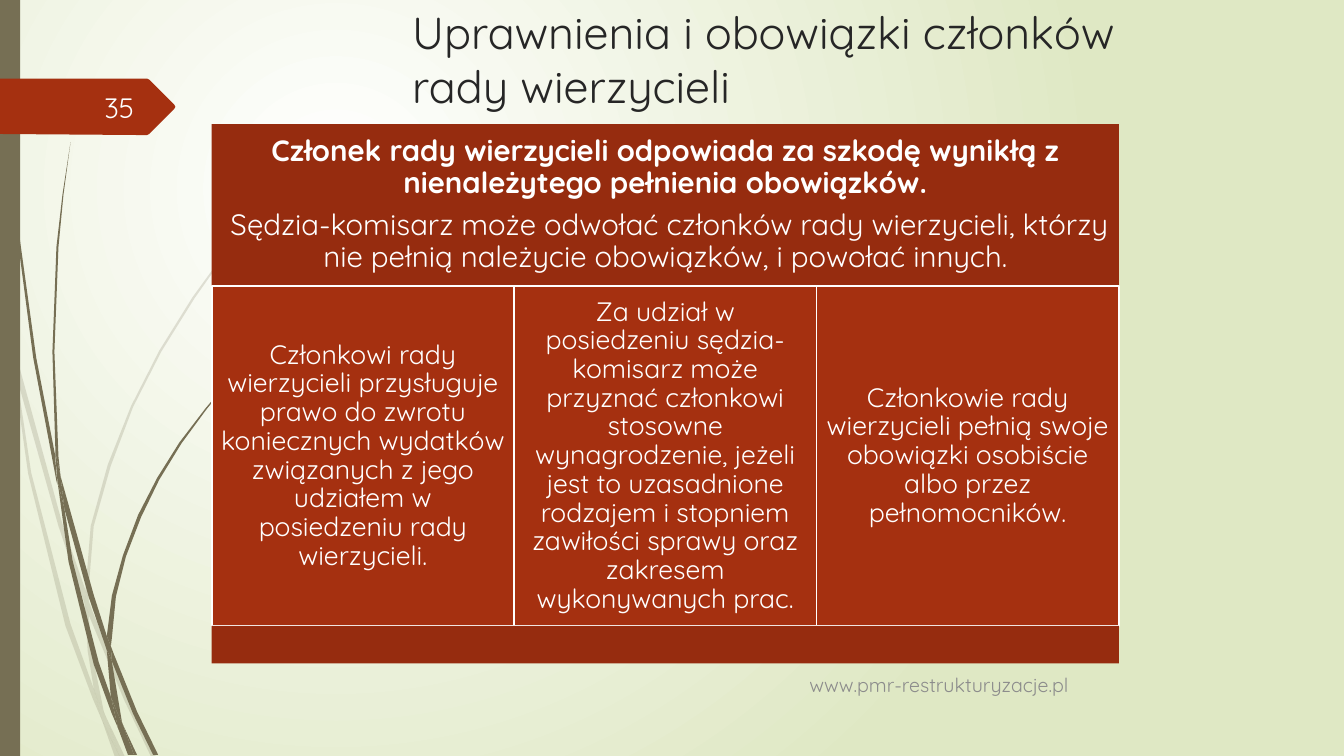
from lxml.etree import SubElement
from pptx import Presentation
from pptx.dml.color import RGBColor
from pptx.enum.shapes import MSO_SHAPE
from pptx.enum.text import MSO_ANCHOR, PP_ALIGN
from pptx.oxml.ns import qn
from pptx.util import Pt

COLORS = {
    "white": "FFFFFF", "pale green": "DFE8C4", "olive": "766F54",
    "red": "A53010", "dark red": "962C0F", "title": "262626",
    "footer": "8C8C8C", "number": "FEFFFF",
}


def add_filled(shape, fill, line=None, opacity=100):
    """Give a shape its fill, outline and opacity, without a shadow."""
    shape.shadow.inherit = False
    shape.fill.solid()
    shape.fill.fore_color.rgb = RGBColor.from_string(COLORS[fill])
    if opacity < 100:
        color = shape.fill._xPr.find(".//" + qn("a:srgbClr"))
        SubElement(color, qn("a:alpha"), val=str(opacity * 1000))
    if line:
        shape.line.color.rgb = RGBColor.from_string(COLORS[line])
        shape.line.width = Pt(1.25)
    else:
        shape.line.fill.background()


def write_text(shape, *texts, size, color, align=PP_ALIGN.LEFT, anchor=MSO_ANCHOR.MIDDLE,
               margin=None, spacing=None, after=0, bold_first=False):
    """Write one paragraph per text."""
    frame = shape.text_frame
    frame.word_wrap = True
    frame.vertical_anchor = anchor
    if margin is not None:
        frame.margin_left = frame.margin_right = Pt(margin)
        frame.margin_top = frame.margin_bottom = Pt(margin)
    for index, text in enumerate(texts):
        paragraph = frame.add_paragraph() if index else frame.paragraphs[0]
        paragraph.alignment = align
        paragraph.line_spacing = spacing
        paragraph.space_after = Pt(after)
        run = paragraph.add_run()
        run.text = text
        run.font.name = "Quicksand"
        run.font.size = Pt(size)
        run.font.bold = bold_first and index == 0
        run.font.color.rgb = RGBColor.from_string(COLORS[color])


presentation = Presentation()
presentation.slide_width = Pt(960)
presentation.slide_height = Pt(540)
slide = presentation.slides.add_slide(presentation.slide_layouts[6])
shapes = slide.shapes

# Background: round gradient with its centre at the upper left
background = slide.background.fill
background.gradient()
for stop, position, name in zip(background.gradient_stops, (0, 1), ("white", "pale green")):
    stop.position = position
    stop.color.rgb = RGBColor.from_string(COLORS[name])
gradient = slide._element.find(".//" + qn("a:gradFill"))
gradient.remove(gradient.find(qn("a:lin")))
circle = SubElement(gradient, qn("a:path"), path="circle")
SubElement(circle, qn("a:fillToRect"), l="50000", t="50000", r="100000", b="100000")

# Outlines, in units of 0.72 pt
pale_grass = [
    [(11, 350), (9, 322), (0, 282), (0, 299), (10, 344)],
    [(58, 522), (84, 599), (85, 586), (62, 520), (14, 345), (17, 376)],
    [(92, 607), (88, 596), (88, 610), (123, 694), (150, 751), (155, 751), (127, 692)],
    [(119, 751), (124, 751), (105, 711)],
    [(93, 683), (70, 619), (31, 469), (17, 376), (11, 350), (28, 470), (65, 621), (92, 693),
     (101, 714), (99, 707)],
    [(84, 599), (87, 646), (93, 683), (96, 692), (105, 711), (103, 706), (91, 646), (88, 610),
     (88, 608)],
    [(88, 584), (93, 522), (110, 462), (132, 404), (160, 349), (193, 296), (229, 245),
     (268, 198), (290, 175), (312, 154), (312, 153), (289, 175), (268, 197), (228, 244),
     (191, 295), (158, 348), (130, 403), (107, 461), (90, 522), (85, 584), (85, 586), (88, 596)],
    [(101, 714), (114, 751), (119, 751)],
    [(88, 608), (88, 596), (85, 586), (84, 599)],
    [(96, 692), (93, 683), (99, 707), (101, 714), (119, 751), (105, 711)],
]
dark_grass = [
    [(7, 110), (17, 233), (33, 355), (56, 477), (57, 481), (55, 457), (55, 453), (36, 355),
     (19, 232), (8, 109), (5, 48), (4, 0), (3, 0), (4, 48)],
    [(88, 592), (106, 645), (106, 631), (93, 590), (60, 472), (64, 505)],
    [(113, 649), (110, 641), (111, 656), (132, 708), (152, 749), (157, 749), (136, 706)],
    [(110, 691), (98, 657), (72, 556), (64, 505), (57, 477), (68, 557), (93, 659), (111, 708),
     (117, 722), (116, 717)],
    [(60, 472), (58, 453), (54, 349), (58, 245), (63, 193), (70, 141), (62, 193), (56, 245),
     (52, 349), (55, 449)],
    [(133, 749), (136, 749), (122, 719)],
    [(57, 477), (64, 505), (60, 472), (55, 449), (55, 453)],
    [(111, 633), (115, 592), (125, 552), (140, 513), (158, 476), (180, 440), (205, 406),
     (231, 374), (245, 359), (261, 344), (260, 344), (245, 358), (231, 373), (204, 405),
     (178, 439), (156, 474), (137, 511), (122, 551), (111, 591), (106, 631), (110, 641)],
    [(117, 722), (127, 749), (131, 749)],
    [(106, 645), (110, 691), (116, 706), (122, 719), (121, 716), (111, 656), (109, 651)],
    [(106, 645), (109, 651), (111, 656), (110, 641), (106, 631)],
    [(116, 706), (110, 691), (116, 717), (117, 722), (130, 749), (133, 749), (122, 719)],
]
number_arrow = [
    [(0, 78), (146, 78), (148, 79), (173, 104), (174, 106), (173, 108), (148, 133), (146, 134),
     (136, 134), (0, 133)],
]

# Left bar, then grass and the page number arrow
side_bar = shapes.add_shape(MSO_SHAPE.RECTANGLE, Pt(0), Pt(0), Pt(14.4), Pt(540))
add_filled(side_bar, "olive")
for outlines, fill, opacity in ((pale_grass, "olive", 20), (dark_grass, "olive", 100),
                                (number_arrow, "red", 100)):
    for first, *others in outlines:
        builder = shapes.build_freeform(*first, scale=Pt(0.72))
        builder.add_line_segments(others, close=True)
        add_filled(builder.convert_to_shape(), fill, opacity=opacity)

# Footer, page number and title
footer = shapes.add_textbox(Pt(571), Pt(479.5), Pt(221), Pt(18.7))
write_text(footer, "www.pmr-restrukturyzacje.pl", size=14, color="footer")
number = shapes.add_textbox(Pt(41.8), Pt(62), Pt(61.2), Pt(28.8))
write_text(number, "35", size=20, color="number", align=PP_ALIGN.RIGHT)
title = shapes.add_textbox(Pt(287.3), Pt(0), Pt(553), Pt(82.8))
write_text(title, "Uprawnienia i obowiązki członków rady wierzycieli",
           size=32, color="title", anchor=MSO_ANCHOR.TOP)

# Block of duties: header, three columns, bottom strip
left, top, width = 151.2, 88.6, 648
header_height, column_height, strip_height = 115.9, 242.6, 26.8
column_top = top + header_height
column_width = width / 3

header = shapes.add_shape(MSO_SHAPE.RECTANGLE, Pt(left), Pt(top), Pt(width), Pt(header_height))
add_filled(header, "dark red")
write_text(
    header,
    "Członek rady wierzycieli odpowiada za szkodę wynikłą z nienależytego pełnienia obowiązków.",
    " Sędzia-komisarz może odwołać członków rady wierzycieli, którzy nie pełnią należycie "
    "obowiązków, i powołać innych.",
    size=21, color="white", align=PP_ALIGN.CENTER, margin=6.3, spacing=0.9, after=7.35,
    bold_first=True)

columns = [
    "Członkowi rady wierzycieli przysługuje prawo do zwrotu koniecznych wydatków związanych "
    "z jego udziałem w posiedzeniu rady wierzycieli.",
    "Za udział w posiedzeniu sędzia-komisarz może przyznać członkowi stosowne wynagrodzenie, "
    "jeżeli jest to uzasadnione rodzajem i stopniem zawiłości sprawy oraz zakresem "
    "wykonywanych prac.",
    "Członkowie rady wierzycieli pełnią swoje obowiązki osobiście albo przez pełnomocników.",
]
for index, text in enumerate(columns):
    column = shapes.add_shape(MSO_SHAPE.RECTANGLE, Pt(left + index * column_width),
                              Pt(column_top), Pt(column_width), Pt(column_height))
    add_filled(column, "red", line="white")
    write_text(column, text, size=19, color="white", align=PP_ALIGN.CENTER,
               margin=5.7, spacing=0.9, after=6.65)

strip = shapes.add_shape(MSO_SHAPE.RECTANGLE, Pt(left), Pt(column_top + column_height),
                         Pt(width), Pt(strip_height))
add_filled(strip, "dark red")

presentation.save("out.pptx")
